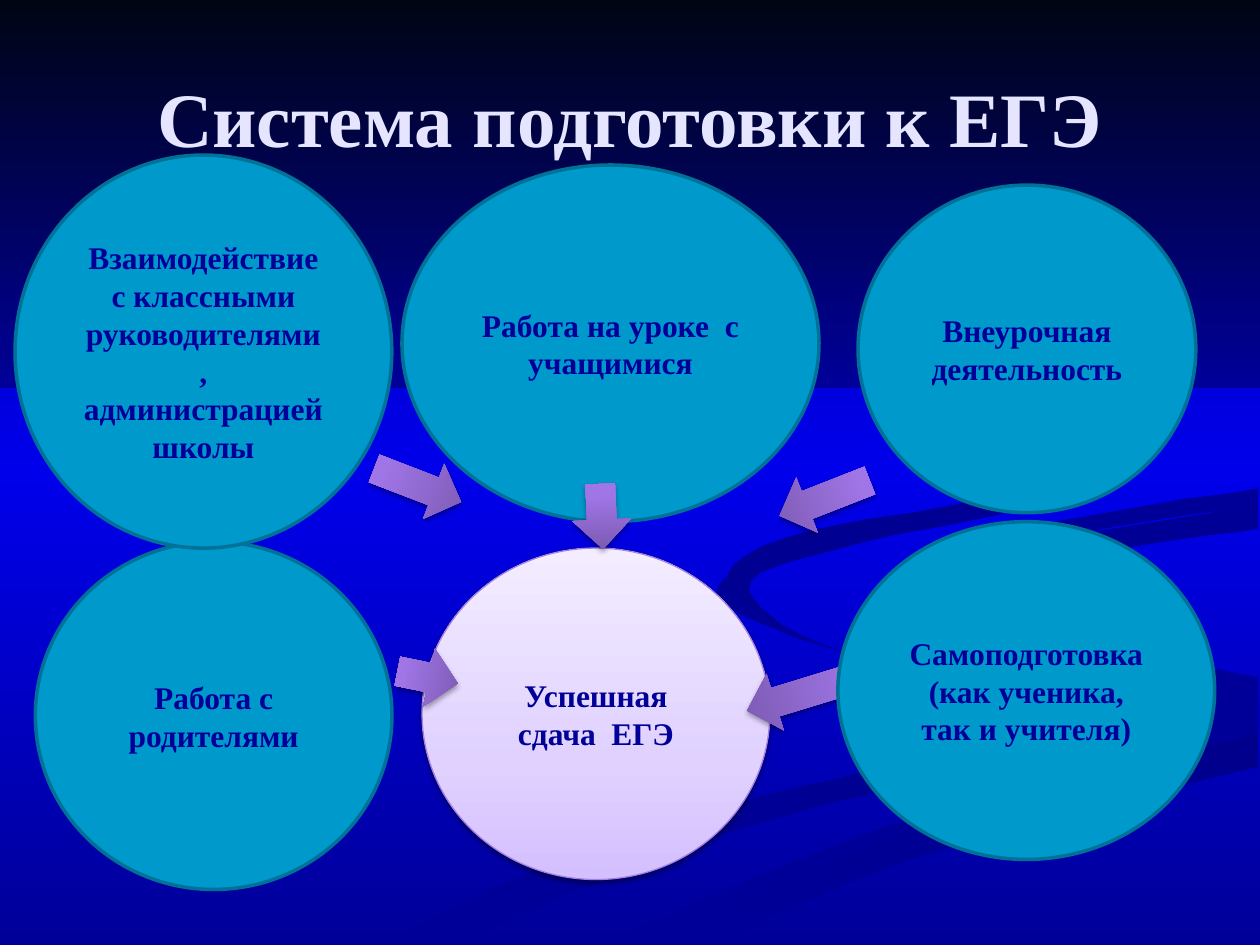
from dataclasses import dataclass
from typing import Optional

from pptx import Presentation
from pptx.dml.color import RGBColor
from pptx.enum.shapes import MSO_SHAPE as Preset
from pptx.enum.text import MSO_ANCHOR as Anchor, MSO_AUTO_SIZE as AutoSize, PP_ALIGN as Align
from pptx.oxml import parse_xml
from pptx.oxml.ns import nsdecls
from pptx.util import Pt

Point = tuple[float, float]
Edge = tuple[Point, ...]


@dataclass(frozen=True)
class Gradient:
    stops: tuple[tuple[int, str], ...]
    angle: int


@dataclass(frozen=True)
class Shadow:
    opacity: int
    blur: float
    distance: float


@dataclass(frozen=True)
class Theme:
    font: str = "Times New Roman"
    title_size: int = 44
    label_size: int = 18
    title: str = "E5E5FF"
    label: str = "000099"
    factor: str = "0099CC"
    factor_line: str = "007197"
    goal_line: str = "A481DD"
    ribbon: str = "000099"
    backdrop: Gradient = Gradient(((0, "000099"), (50, "0000EA"), (100, "000099")), 90)
    wall: Gradient = Gradient(((0, "000514"), (100, "000099")), 90)
    goal: Gradient = Gradient(((0, "D4BFFF"), (35, "E0D1FF"), (100, "F3EDFF")), 270)
    arrow: Gradient = Gradient(((0, "7B5AB1"), (80, "A075E6"), (100, "A073E9")), 270)
    goal_shadow: Shadow = Shadow(38, 3.1, 1.6)
    arrow_shadow: Shadow = Shadow(35, 3.1, 1.8)


@dataclass(frozen=True)
class Box:
    left: float
    top: float
    width: float
    height: float

    def lengths(self) -> tuple[Pt, ...]:
        return tuple(Pt(v) for v in (self.left, self.top, self.width, self.height))


@dataclass(frozen=True)
class Circle:
    box: Box
    paragraphs: tuple[str, ...]


@dataclass(frozen=True)
class Arrow:
    left: float
    top: float
    length: float
    rotation: float


@dataclass(frozen=True)
class Ribbon:
    """Smooth edges, joined end to end by straight lines."""
    fill: str | Gradient
    edges: tuple[Edge, ...]


THEME = Theme()
ARROW_WIDTH = 33.8
CURVE_STEPS = 5


def shade(first: str, last: str, angle: int) -> Gradient:
    return Gradient(((0, first), (100, last)), angle)


RIBBONS = (
    Ribbon(shade("000099", "000093", 0), (
        ((414, 330), (412, 343), (454, 364), (541, 391), (566, 408), (503, 438), (359, 476),
         (216, 539)),
        ((260, 539), (406, 479), (562, 436), (576, 418), (562, 398), (462, 365), (414, 330)))),
    Ribbon(shade("000099", "000093", 45), (
        ((521, 334), (546, 359), (639, 385), (679, 410), (644, 436)),
        ((644, 436), (661, 418), (634, 395), (544, 364), (521, 334)))),
    Ribbon(shade("00008C", "000099", 90), (
        ((362, 539), (454, 499), (574, 459), (719, 418)),
        ((719, 438), (520, 491), (411, 539)))),
    Ribbon(THEME.ribbon, (
        ((719, 279), (598, 299), (527, 321), (528, 348), (598, 374), (673, 401), (667, 427),
         (507, 472), (343, 539)),
        ((374, 539), (501, 482), (719, 418)),
        ((719, 387), (611, 362), (563, 336), (612, 307), (719, 289)))),
    Ribbon(shade("000091", "000099", 45), (
        ((719, 289), (612, 307), (563, 331), (595, 357)),
        ((595, 357), (580, 340), (632, 316), (719, 302)))),
    Ribbon(shade("00008E", "000099", 45), (
        ((549, 168), (622, 210), (644, 248), (616, 282), (492, 310), (429, 332), (448, 360)),
        ((448, 360), (415, 333), (450, 307), (570, 282), (639, 246), (616, 205), (549, 168)))),
)

GOAL = Circle(Box(241.2, 313.2, 198.7, 189.4), ("Успешная сдача  ЕГЭ",))
FACTORS = (
    Circle(Box(229.7, 94.3, 238.3, 203.8), ("Работа на уроке  с учащимися",)),
    Circle(Box(490.3, 105.8, 193, 187.2), ("Внеурочная деятельность",)),
    Circle(Box(478.8, 298.1, 215.3, 193), ("Самоподготовка (как ученика, так и учителя)",)),
    Circle(Box(20.2, 309.6, 203.8, 198.7), ("Работа с родителями",)),
    Circle(Box(8.6, 88.6, 215.3, 224.6),
           ("Взаимодействие с классными руководителями,", "администрацией школы")),
)
ARROWS_BEHIND = (Arrow(454.3, 257, 55.4, 68.6), Arrow(221.8, 250.6, 53.3, 291.1),
                 Arrow(447.8, 355, 79.2, 73))
ARROWS_FRONT = (Arrow(326.9, 276.5, 37.4, 357.4), Arrow(227.5, 369.4, 35.3, 281.5))


def smooth(edge: Edge) -> list[Point]:
    """Catmull-Rom curve through the points of an edge."""
    padded = (edge[0], *edge, edge[-1])
    curve = [edge[0]]
    for knots in zip(padded, padded[1:], padded[2:], padded[3:]):
        for step in range(1, CURVE_STEPS + 1):
            t = step / CURVE_STEPS
            curve.append(tuple(
                b + t * (c - a) / 2 + t**2 * (2 * a - 5 * b + 4 * c - d) / 2
                + t**3 * (3 * b - a - 3 * c + d) / 2
                for a, b, c, d in zip(*knots)))
    return curve


def paint_gradient(owner, gradient: Gradient) -> None:
    """Fill a shape or a background with a gradient of any number of stops."""
    owner.fill.gradient()
    current = owner.element.xpath(".//a:gradFill")[0]
    stops = "".join(f'<a:gs pos="{pos * 1000}"><a:srgbClr val="{color}"/></a:gs>'
                    for pos, color in gradient.stops)
    current.getparent().replace(current, parse_xml(
        f'<a:gradFill {nsdecls("a")} rotWithShape="1"><a:gsLst>{stops}</a:gsLst>'
        f'<a:lin ang="{gradient.angle * 60000}" scaled="0"/></a:gradFill>'))


def paint(shape, fill: str | Gradient, line: Optional[str] = None, width: float = 0,
          shadow: Optional[Shadow] = None) -> None:
    if isinstance(fill, Gradient):
        paint_gradient(shape, fill)
    else:
        shape.fill.solid()
        shape.fill.fore_color.rgb = RGBColor.from_string(fill)
    if line:
        shape.line.color.rgb = RGBColor.from_string(line)
        shape.line.width = Pt(width)
    else:
        shape.line.fill.background()
    shape.shadow.inherit = False
    if shadow:
        shape.element.xpath("./p:spPr/a:effectLst")[0].append(parse_xml(
            f'<a:outerShdw {nsdecls("a")} blurRad="{Pt(shadow.blur)}" dist="{Pt(shadow.distance)}" '
            f'dir="5400000" rotWithShape="0"><a:srgbClr val="000000">'
            f'<a:alpha val="{shadow.opacity * 1000}"/></a:srgbClr></a:outerShdw>'))


def write(frame, paragraphs: tuple[str, ...], size: int, color: str) -> None:
    frame.text = "\n".join(paragraphs)
    frame.word_wrap = True
    frame.auto_size = AutoSize.NONE
    frame.vertical_anchor = Anchor.MIDDLE
    for paragraph in frame.paragraphs:
        paragraph.alignment = Align.CENTER
        font = paragraph.font
        font.name, font.size, font.bold = THEME.font, Pt(size), True
        font.color.rgb = RGBColor.from_string(color)


def draw_ribbon(shapes, ribbon: Ribbon) -> None:
    start, *rest = [point for edge in ribbon.edges for point in smooth(edge)]
    builder = shapes.build_freeform(*start, scale=Pt(1))
    builder.add_line_segments(rest, close=True)
    paint(builder.convert_to_shape(), ribbon.fill)


def draw_circle(shapes, circle: Circle, *look) -> None:
    ellipse = shapes.add_shape(Preset.OVAL, *circle.box.lengths())
    paint(ellipse, *look)
    write(ellipse.text_frame, circle.paragraphs, THEME.label_size, THEME.label)


def draw_arrows(shapes, arrows: tuple[Arrow, ...]) -> None:
    for arrow in arrows:
        box = Box(arrow.left, arrow.top, ARROW_WIDTH, arrow.length)
        pointer = shapes.add_shape(Preset.DOWN_ARROW, *box.lengths())
        pointer.rotation = arrow.rotation
        paint(pointer, THEME.arrow, shadow=THEME.arrow_shadow)


def main() -> None:
    deck = Presentation()
    deck.slide_width, deck.slide_height = Pt(720), Pt(540)
    slide = deck.slides.add_slide(deck.slide_layouts[5])
    shapes = slide.shapes
    # Backdrop: gradient, ribbons and the dark upper wall
    paint_gradient(slide.background, THEME.backdrop)
    for ribbon in RIBBONS:
        draw_ribbon(shapes, ribbon)
    paint(shapes.add_shape(Preset.RECTANGLE, *Box(0, 0, 720, 221.8).lengths()), THEME.wall)
    # Title, raised above the backdrop
    title = shapes.title
    title.left, title.top, title.width, title.height = Box(36, 21.6, 648, 90).lengths()
    write(title.text_frame, ("Система подготовки к ЕГЭ",), THEME.title_size, THEME.title)
    title.element.getparent().append(title.element)
    # Goal, the factors around it and the arrows between them
    draw_circle(shapes, GOAL, THEME.goal, THEME.goal_line, 0.75, THEME.goal_shadow)
    draw_arrows(shapes, ARROWS_BEHIND)
    for factor in FACTORS:
        draw_circle(shapes, factor, THEME.factor, THEME.factor_line, 2)
    draw_arrows(shapes, ARROWS_FRONT)
    deck.save("out.pptx")


if __name__ == "__main__":
    main()
